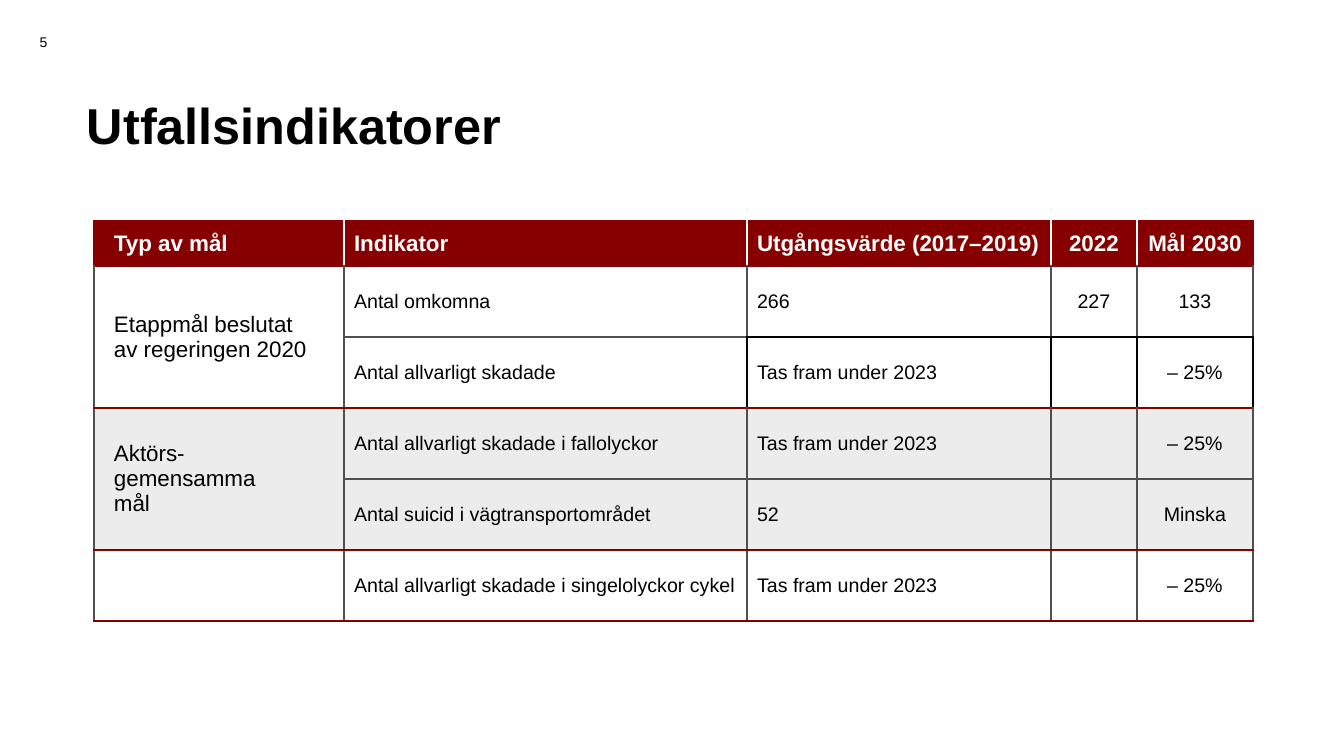
import copy
import lxml.etree
import pptx
import pptx.dml.color
import pptx.enum.text
import pptx.oxml.ns
import pptx.util

COLORS = {"ink": "000000", "paper": "FFFFFF", "wine": "870000", "band": "ECECEC", "rule": "505050"}
PAGE_SIZE = (1344, 756)
TEXTS = [
    {"text": "Utfallsindikatorer", "place": (77, 100, 1190, 57), "size": 36, "bold": True, "align": "LEFT", "spacing": 0.9},
    {"text": "5", "place": (0, 22, 87, 40), "size": 10, "bold": False, "align": "CENTER", "spacing": 1.0},
]
TABLE_CORNER = (94, 221)
COLUMN_WIDTHS = [250, 403, 304, 86, 116]
ROW_HEIGHTS = [45] + [71] * 5
ROWS = [
    ["Typ av mål", "Indikator", "Utgångsvärde (2017–2019)", "2022", "Mål 2030"],
    ["Etappmål beslutat \nav regeringen 2020", "Antal omkomna", "266", "227", "133"],
    ["", "Antal allvarligt skadade", "Tas fram under 2023", "", "– 25%"],
    ["Aktörs-\ngemensamma \nmål", "Antal allvarligt skadade i fallolyckor", "Tas fram under 2023", "", "– 25%"],
    ["", "Antal suicid i vägtransportområdet", "52", "", "Minska"],
    ["", "Antal allvarligt skadade i singelolyckor cykel", "Tas fram under 2023", "", "– 25%"],
]
GROUP_STARTS = (1, 3)
GROUP_EDGES = (3, 5, 6)
BAND_ROWS = (3, 4)
DARK_ROW = 2
DARK_COLUMN = 2
PIXEL = pptx.util.Inches(1) / 100.8


def px(value):
    return pptx.util.Emu(round(value * PIXEL))


def color(name):
    return pptx.dml.color.RGBColor.from_string(COLORS[name])


def write(frame, text, size, bold, ink, align, spacing=None):
    para = frame.paragraphs[0]
    para.text = text
    para.alignment = getattr(pptx.enum.text.PP_ALIGN, align)
    para.line_spacing = spacing
    for span in para.runs:
        formats = {"name": "Arial", "size": pptx.util.Pt(size), "bold": bold}
        for name, value in formats.items():
            setattr(span.font, name, value)
        span.font.color.rgb = color(ink)
    for line_break in para._p.findall(pptx.oxml.ns.qn("a:br")):
        line_break.append(copy.deepcopy(para.runs[0]._r.rPr))


def horizontal_edge(edge, column):
    if edge in GROUP_EDGES:
        return "wine", 2.25
    if edge < 2:
        return "wine", 1
    return ("ink" if edge == DARK_ROW and column >= DARK_COLUMN else "rule"), 1


def vertical_edge(row, edge):
    if row == 0:
        return ("paper", 1.5) if 0 < edge < len(COLUMN_WIDTHS) else ("wine", 1)
    return ("ink" if row == DARK_ROW and edge >= DARK_COLUMN else "rule"), 1


def draw_borders(cell, row, column):
    top, bottom = row, row + 1
    if column == 0:
        if row in GROUP_STARTS:
            bottom = row + 2
        elif row - 1 in GROUP_STARTS:
            top = row - 1
    edges = {
        "a:lnL": vertical_edge(row, column),
        "a:lnR": vertical_edge(row, column + 1),
        "a:lnT": horizontal_edge(top, column),
        "a:lnB": horizontal_edge(bottom, column),
    }
    properties = cell._tc.get_or_add_tcPr()
    qn = pptx.oxml.ns.qn
    for tag, (name, width) in edges.items():
        line = lxml.etree.SubElement(properties, qn(tag), w=str(pptx.util.Pt(width)))
        fill = lxml.etree.SubElement(line, qn("a:solidFill"))
        lxml.etree.SubElement(fill, qn("a:srgbClr"), val=COLORS[name])


def add_texts(page):
    for item in TEXTS:
        box = page.shapes.add_textbox(*map(px, item["place"]))
        frame = box.text_frame
        frame.word_wrap = True
        frame.vertical_anchor = pptx.enum.text.MSO_ANCHOR.MIDDLE
        write(frame, item["text"], item["size"], item["bold"], "ink", item["align"], item["spacing"])


def add_indicator_table(page):
    extent = (sum(COLUMN_WIDTHS), sum(ROW_HEIGHTS))
    frame = page.shapes.add_table(len(ROWS), len(COLUMN_WIDTHS), *map(px, TABLE_CORNER + extent))
    table = frame.table
    table.first_row = False
    table.horz_banding = False
    for column, width in zip(table.columns, COLUMN_WIDTHS):
        column.width = px(width)
    for row, height in zip(table.rows, ROW_HEIGHTS):
        row.height = px(height)
    for start in GROUP_STARTS:
        table.cell(start, 0).merge(table.cell(start + 1, 0))
    for row, texts in enumerate(ROWS):
        for column, text in enumerate(texts):
            cell = table.cell(row, column)
            header = row == 0
            draw_borders(cell, row, column)
            cell.fill.solid()
            cell.fill.fore_color.rgb = color("wine" if header else "band" if row in BAND_ROWS else "paper")
            cell.vertical_anchor = pptx.enum.text.MSO_ANCHOR.MIDDLE
            if column == 0:
                cell.margin_left = px(20)
            if text:
                size = 16 if header or column == 0 else 14
                align = "CENTER" if column > 2 else "LEFT"
                write(cell.text_frame, text, size, header, "paper" if header else "ink", align)


def main():
    deck = pptx.Presentation()
    deck.slide_width, deck.slide_height = map(px, PAGE_SIZE)
    page = deck.slides.add_slide(deck.slide_layouts[6])
    add_texts(page)
    add_indicator_table(page)
    deck.save("out.pptx")


if __name__ == "__main__":
    main()
